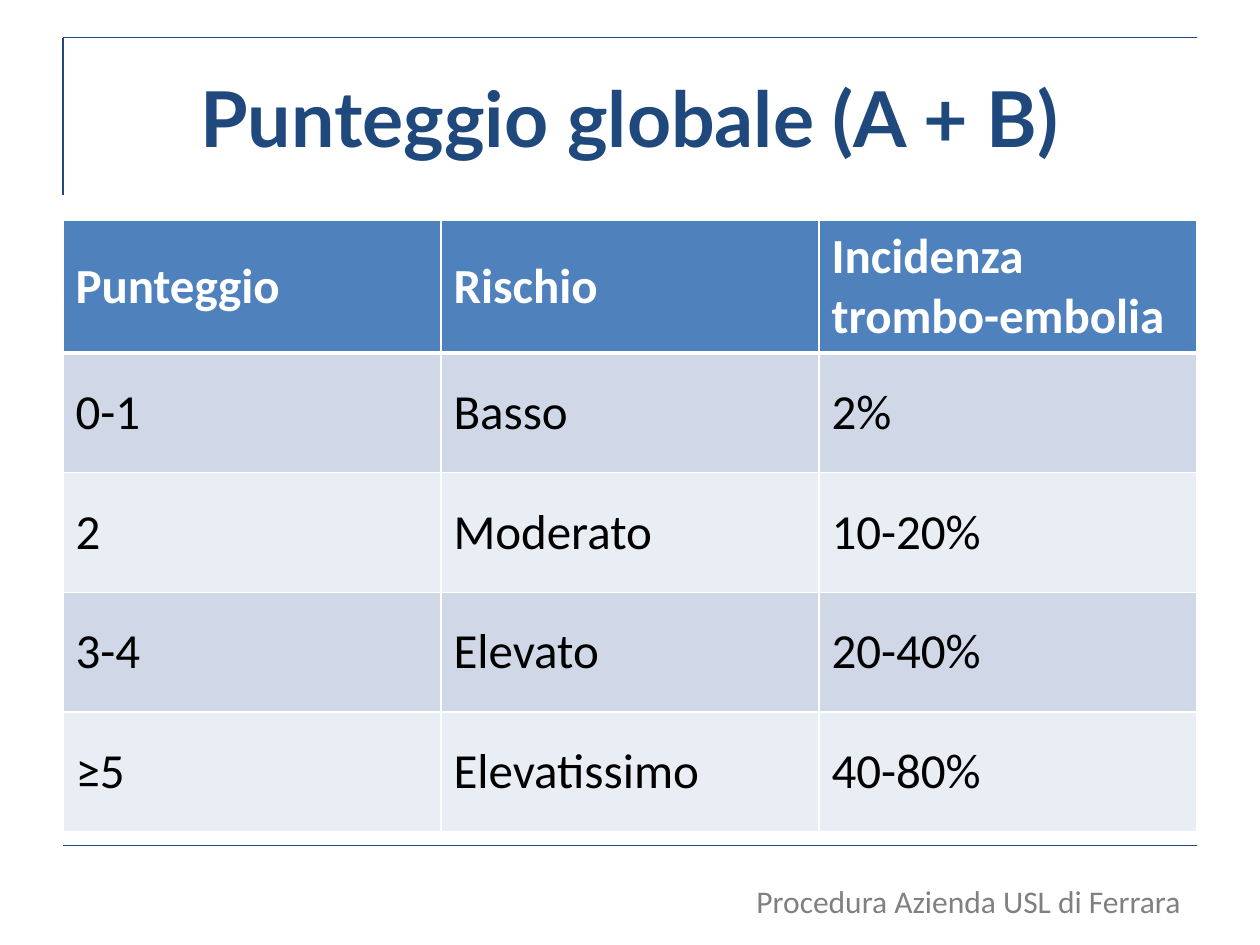
import pptx
import pptx.dml.color
import pptx.enum.shapes
import pptx.enum.text
import pptx.oxml.ns
import pptx.util
from lxml import etree

WIDTH, HEIGHT = 10, 7.5
MARGIN = 0.05 * WIDTH
CONTENT_WIDTH = WIDTH - 2 * MARGIN
HEADER_TOP, HEADER_HEIGHT = 0.04 * HEIGHT, 1.25
TABLE_TOP, ROW_HEIGHT = 1.75, 0.95
FOOTER_RULE = 6.71

COLOURS = {
    "navy": "1F497D",
    "header": "4F81BD",
    "odd_row": "D0D8E8",
    "even_row": "E9EDF4",
    "white": "FFFFFF",
    "black": "000000",
    "grey": "808080",
}

RISK_ROWS = [
    ("Punteggio", "Rischio", "Incidenza trombo-embolia"),
    ("0-1", "Basso", "2%"),
    ("2", "Moderato", "10-20%"),
    ("3-4", "Elevato", "20-40%"),
    ("≥5", "Elevatissimo", "40-80%"),
]


def colour(name):
    return pptx.dml.color.RGBColor.from_string(COLOURS[name])


def box(*lengths):
    return [pptx.util.Inches(length) for length in lengths]


def format_text(frame, font_name, size, colour_name, bold=False, align=None):
    paragraph = frame.paragraphs[0]
    paragraph.alignment = align
    for run in paragraph.runs:
        run.font.name = font_name
        run.font.size = pptx.util.Pt(size)
        run.font.bold = bold
        run.font.color.rgb = colour(colour_name)


def add_rule(slide, *ends):
    rule = slide.shapes.add_connector(
        pptx.enum.shapes.MSO_CONNECTOR.STRAIGHT, *box(*ends))
    rule.line.color.rgb = colour("navy")
    rule.line.width = pptx.util.Pt(0.75)
    etree.SubElement(rule.element.spPr, pptx.oxml.ns.qn("a:effectLst"))


def add_title(slide, text):
    title = slide.shapes.title
    title.left, title.top, title.width, title.height = box(
        MARGIN, HEADER_TOP, CONTENT_WIDTH, HEADER_HEIGHT)
    title.text_frame.text = text
    title.text_frame.vertical_anchor = pptx.enum.text.MSO_ANCHOR.MIDDLE
    format_text(title.text_frame, "Lato", 44, "navy", True,
                pptx.enum.text.PP_ALIGN.CENTER)


def set_borders(cell, top, bottom):
    """Draw white borders; the side ones are always 1 pt wide."""
    properties = cell._tc.get_or_add_tcPr()
    for side, width in (("L", 1), ("R", 1), ("T", top), ("B", bottom)):
        border = etree.SubElement(properties, pptx.oxml.ns.qn(f"a:ln{side}"),
                                  w=str(pptx.util.Pt(width)))
        fill = etree.SubElement(border, pptx.oxml.ns.qn("a:solidFill"))
        etree.SubElement(fill, pptx.oxml.ns.qn("a:srgbClr"),
                         val=COLOURS["white"])


def add_risk_table(slide, rows):
    table = slide.shapes.add_table(
        len(rows), len(rows[0]),
        *box(MARGIN, TABLE_TOP, CONTENT_WIDTH, ROW_HEIGHT * len(rows))).table
    for row_index, row in enumerate(rows):
        is_header = row_index == 0
        band = "odd_row" if row_index % 2 else "even_row"
        for column_index, text in enumerate(row):
            cell = table.cell(row_index, column_index)
            set_borders(cell, top=3 if row_index == 1 else 1,
                        bottom=3 if is_header else 1)
            cell.fill.solid()
            cell.fill.fore_color.rgb = colour("header" if is_header else band)
            cell.vertical_anchor = pptx.enum.text.MSO_ANCHOR.MIDDLE
            cell.text_frame.text = text
            format_text(cell.text_frame, "Calibri", 28,
                        "white" if is_header else "black", is_header)


def add_source_note(slide, text):
    note = slide.shapes.add_textbox(*box(5.71, 6.95, 3.76, 0.4))
    note.text_frame.word_wrap = True
    note.text_frame.text = text
    format_text(note.text_frame, "Calibri", 18, "grey",
                align=pptx.enum.text.PP_ALIGN.RIGHT)


def main():
    presentation = pptx.Presentation()
    presentation.slide_width, presentation.slide_height = box(WIDTH, HEIGHT)
    slide = presentation.slides.add_slide(presentation.slide_layouts[5])
    right = WIDTH - MARGIN
    add_rule(slide, MARGIN, FOOTER_RULE, right, FOOTER_RULE)
    add_rule(slide, MARGIN, HEADER_TOP, right, HEADER_TOP)
    add_rule(slide, MARGIN, HEADER_TOP, MARGIN, HEADER_TOP + HEADER_HEIGHT)
    add_title(slide, "Punteggio globale (A + B)")
    add_risk_table(slide, RISK_ROWS)
    add_source_note(slide, "Procedura Azienda USL di Ferrara")
    presentation.save("out.pptx")


if __name__ == "__main__":
    main()
